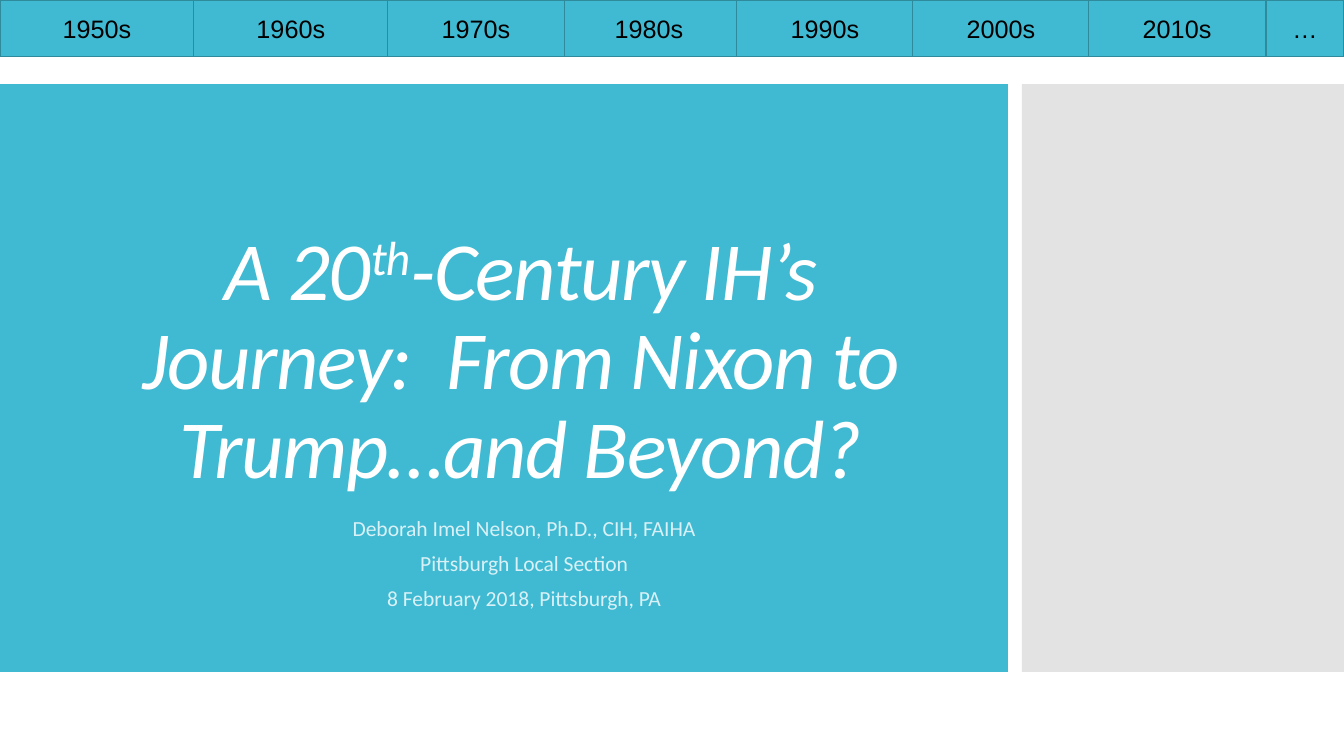
"""Builds a title slide with a strip of decades along its top edge."""
from dataclasses import dataclass

from lxml import etree
from pptx import Presentation
from pptx.dml.color import RGBColor
from pptx.enum.shapes import MSO_SHAPE
from pptx.enum.text import MSO_ANCHOR, MSO_AUTO_SIZE, PP_ALIGN
from pptx.oxml.ns import qn
from pptx.util import Pt

RECT = MSO_SHAPE.RECTANGLE
CENTER = PP_ALIGN.CENTER
TOP, MIDDLE, BOTTOM = MSO_ANCHOR.TOP, MSO_ANCHOR.MIDDLE, MSO_ANCHOR.BOTTOM
NO_FIT = MSO_AUTO_SIZE.NONE

TITLE_RUNS = [
    ("A 20", 0),
    ("th", 30),
    ("-Century IH’s Journey:  From Nixon to Trump…and Beyond?", 0),
]
SUBTITLE = [
    "Deborah Imel Nelson, Ph.D., CIH, FAIHA",
    "Pittsburgh Local Section",
    "8 February 2018, Pittsburgh, PA",
]
DECADES = [
    ("1950s", 0, 138.5),
    ("1980s", 400.5, 126),
    ("1990s", 526.25, 126),
    ("2000s", 652, 126),
    ("2010s", 777.75, 126),
    ("1960s", 138.5, 138.5),
    ("1970s", 277, 126),
    ("…", 904.25, 55.75),
]
SLIDE_W, SLIDE_H = 960, 540
STRIP_H = 40.3
PANEL_TOP, PANEL_H = 60, 420
MAIN_W, SIDE_LEFT = 720, 730
TITLE_BOX = (84, 102, 576, 256.5)
SUBTITLE_BOX = (86.4, 369.5, 576, 72)


@dataclass(frozen=True)
class Theme:
    """Colours, fonts and type sizes of the slide."""
    teal: str = "40BAD2"
    edge: str = "2F8A9B"
    grey: str = "C8C8C8"
    white: str = "FFFFFF"
    pale: str = "D9F1F6"
    black: str = "000000"
    heading_font: str = "Calibri"
    strip_font: str = "Arial"
    title_size: float = 59
    subtitle_size: float = 15.4
    strip_size: float = 18


THEME = Theme()


def style(p, font, size, color):
    """Centres a paragraph and sets its font."""
    p.alignment = CENTER
    p.font.name, p.font.size = font, Pt(size)
    p.font.color.rgb = RGBColor.from_string(color)


def add_rect(s, box, fill):
    """Adds a filled rectangle without a line."""
    sp = s.shapes.add_shape(RECT, *map(Pt, box))
    sp.shadow.inherit = False
    sp.fill.solid()
    sp.fill.fore_color.rgb = RGBColor.from_string(fill)
    sp.line.fill.background()
    return sp


def place(s, sp, box, anchor):
    """Moves a placeholder to the front and into its box."""
    sp.left, sp.top, sp.width, sp.height = map(Pt, box)
    s.shapes._spTree.append(sp._element)
    tf = sp.text_frame
    tf.word_wrap, tf.auto_size, tf.vertical_anchor = True, NO_FIT, anchor
    return tf


def add_panels(s):
    """Adds the main panel and the translucent side panel."""
    add_rect(s, (0, PANEL_TOP, MAIN_W, PANEL_H), THEME.teal)
    side = add_rect(s, (SIDE_LEFT, PANEL_TOP, SLIDE_W - SIDE_LEFT, PANEL_H), THEME.grey)
    color = side._element.spPr.find(qn("a:solidFill")).find(qn("a:srgbClr"))
    etree.SubElement(color, qn("a:alpha"), val="50000")


def add_title(s):
    """Fills the title, with its raised ordinal."""
    p = place(s, s.shapes.title, TITLE_BOX, BOTTOM).paragraphs[0]
    style(p, THEME.heading_font, THEME.title_size, THEME.white)
    p.font.italic = True
    p.line_spacing = 0.9
    for text, raised in TITLE_RUNS:
        r = p.add_run()
        r.text = text
        rpr = r._r.get_or_add_rPr()
        rpr.set("spc", "-100")
        rpr.set("baseline", str(raised * 1000))


def add_subtitle(s):
    """Fills the subtitle, one paragraph a line."""
    tf = place(s, s.placeholders[1], SUBTITLE_BOX, TOP)
    tf.text = "\n".join(SUBTITLE)
    for i, p in enumerate(tf.paragraphs):
        style(p, THEME.heading_font, THEME.subtitle_size, THEME.pale)
        p.line_spacing = 0.7
        p.space_before = Pt(12 if i else 0)


def add_decades(s):
    """Adds the strip of decades."""
    for label, left, width in DECADES:
        sp = add_rect(s, (left, 0, width, STRIP_H), THEME.teal)
        sp.line.color.rgb = RGBColor.from_string(THEME.edge)
        sp.line.width = Pt(0.85)
        tf = sp.text_frame
        tf.word_wrap, tf.vertical_anchor = True, MIDDLE
        tf.text = label
        style(tf.paragraphs[0], THEME.strip_font, THEME.strip_size, THEME.black)


def main():
    """Builds and saves the slide."""
    prs = Presentation()
    prs.slide_width, prs.slide_height = Pt(SLIDE_W), Pt(SLIDE_H)
    s = prs.slides.add_slide(prs.slide_layouts[0])
    add_panels(s)
    add_title(s)
    add_subtitle(s)
    add_decades(s)
    prs.save("out.pptx")


if __name__ == "__main__":
    main()
